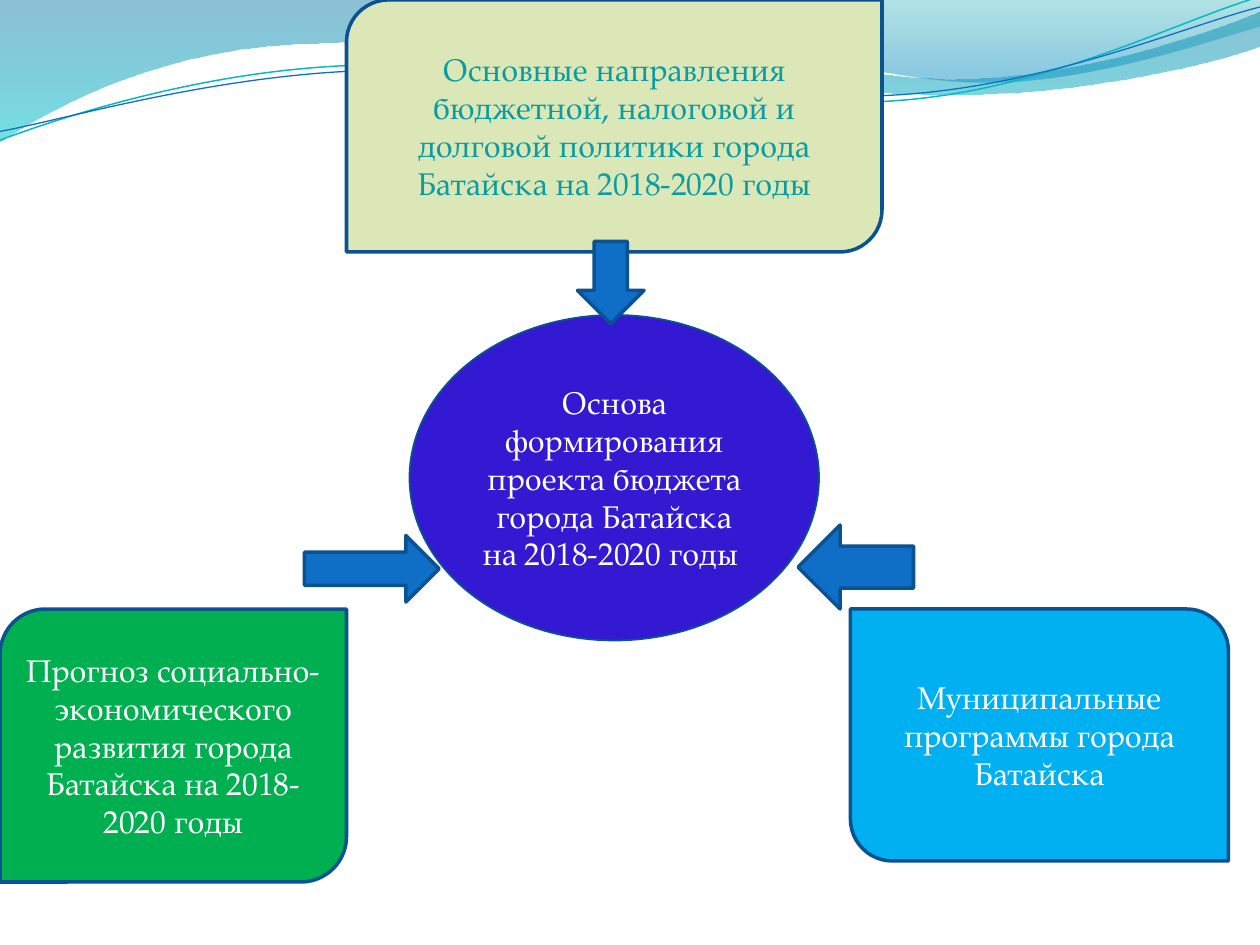
from lxml.etree import SubElement
from pptx import Presentation
from pptx.dml.color import RGBColor
from pptx.enum.shapes import MSO_SHAPE as Shape
from pptx.enum.text import MSO_ANCHOR as Anchor, PP_ALIGN as Align
from pptx.oxml.ns import qn
from pptx.util import Pt

FONT = "TeX Gyre Pagella"
COLORS = {
    "outline": "0B5292", "arrow": "0F6FC6", "center": "3319D1",
    "policy": "DBE7B6", "policy_text": "089CA3", "forecast": "00B050",
    "programs": "00B0F0", "white": "FFFFFF", "teal_line": "0AB8BF",
    "wave_blue": "0074A1", "wave_cyan": "00C6CF",
    "crest_teal": "00A1A9", "crest_blue": "008BBF",
}
WAVE_TILT = 357.3


def color(name):
    return RGBColor.from_string(COLORS[name])


def write_text(shape, text, size=18, font=FONT, text_color="white", align=Align.CENTER):
    frame = shape.text_frame
    frame.word_wrap = True
    frame.vertical_anchor = Anchor.MIDDLE
    paragraph = frame.paragraphs[0]
    paragraph.alignment = align
    run = paragraph.add_run()
    run.text = text
    run.font.size = Pt(size)
    run.font.name = font
    run.font.color.rgb = color(text_color)


def add_figure(slide, kind, box, fill, line_width=2):
    shape = slide.shapes.add_shape(kind, *map(Pt, box))
    shape.shadow.inherit = False
    shape.fill.solid()
    shape.fill.fore_color.rgb = color(fill)
    shape.line.color.rgb = color("outline")
    shape.line.width = Pt(line_width)
    return shape


def add_outline(slide, start, segments, close):
    """Segments of two numbers are corners, of six numbers Bézier curves."""
    points = [(Pt(x), Pt(y)) for segment in segments
              for x, y in zip(segment[::2], segment[1::2])]
    builder = slide.shapes.build_freeform(Pt(start[0]), Pt(start[1]))
    builder.add_line_segments(points, close=close)
    shape = builder.convert_to_shape()
    shape.shadow.inherit = False

    # Join the three points of each curve into one Bézier segment
    lines = iter(list(shape.element.spPr.iter(qn("a:lnTo"))))
    for segment in segments:
        first = next(lines)
        if len(segment) == 6:
            first.tag = qn("a:cubicBezTo")
            for line in (next(lines), next(lines)):
                first.append(line[0])
                line.getparent().remove(line)
    return shape


def add_wave(slide, start, segments, stops):
    shape = add_outline(slide, start, segments, close=True)
    shape.line.fill.background()
    shape.fill.gradient()
    shape.fill.gradient_angle = 270
    for stop, (position, name, opacity) in zip(shape.fill.gradient_stops, stops):
        stop.position = position
        stop.color.rgb = color(name)
    color_elements = shape.element.spPr.findall(".//" + qn("a:gs") + "/" + qn("a:srgbClr"))
    for element, (position, name, opacity) in zip(color_elements, stops):
        SubElement(element, qn("a:alpha")).set("val", str(opacity * 1000))


def add_wave_line(slide, start, segments, name, width):
    shape = add_outline(slide, start, segments, close=False)
    shape.fill.background()
    shape.line.color.rgb = color(name)
    shape.line.width = Pt(width)
    shape.rotation = WAVE_TILT


def add_header_waves(slide, box):
    left, top, right = box[0], box[1], box[0] + box[2]
    # Translucent bands
    add_wave(slide, (left, top), [
        (317, -1), (343, 12, 478, 45, 546, 45), (614, 45, 690, 19, right, 6.5),
        (right + 1, 26), (708, 32, 626, 55, 537, 54), (448, 54, 275, 20, 185, 24.5),
        (93, 26, 33, 60, left - 1, 81.5)],
        [(0, "wave_blue", 45), (1, "wave_cyan", 55)])
    add_wave(slide, (345, -1), [
        (366, 8, 491, 45, 554, 47), (616, 50, 692, 23, right, 15), (right, top)],
        [(0, "crest_teal", 30), (0.8, "crest_blue", 45)])
    # Thin lines, drawn level and then tilted
    add_wave_line(slide, (left - 1.4, 63.1), [
        (34.2, 51.7, 114.3, 29.4, 199.4, 29.9), (284.4, 30.4, 425.8, 67.2, 512, 64.7),
        (599.3, 62.3, 676.1, 25.9, right + 0.6, 15.4)], "teal_line", 0.85)
    add_wave_line(slide, (left - 1.1, 58.1), [
        (33.2, 53.7, 118.2, 32.6, 204.3, 33.2), (290.3, 33.7, 429.1, 63.3, 515.3, 61.4),
        (601.4, 59.4, 677.9, 29.9, right + 1.4, 21)], "arrow", 0.75)


def add_center(slide, box, text):
    write_text(add_figure(slide, Shape.OVAL, box, "center", line_width=1), text)


def add_source(slide, box, text, fill, text_color="white", mirrored=False):
    shape = add_figure(slide, Shape.ROUND_2_DIAG_RECTANGLE, box, fill)
    if mirrored:
        shape.adjustments[0], shape.adjustments[1] = 0, 0.16667
    write_text(shape, text, text_color=text_color)


def add_arrow(slide, box, kind=Shape.RIGHT_ARROW, rotation=0):
    add_figure(slide, kind, box, "arrow").rotation = rotation


def main():
    presentation = Presentation()
    presentation.slide_width, presentation.slide_height = Pt(720), Pt(540)
    slide = presentation.slides.add_slide(presentation.slide_layouts[6])

    add_header_waves(slide, (0, 0, 720, 82))

    # Center and the three sources around it
    add_center(slide, (234, 180, 234, 186),
               "Основа формирования проекта бюджета города Батайска на 2018-2020 годы ")
    add_source(slide, (486, 348, 216, 144),
               "Муниципальные программы города Батайска", "programs", mirrored=True)
    add_source(slide, (0, 348, 198, 156),
               "Прогноз социально-экономического развития города Батайска на 2018-2020 годы",
               "forecast")
    add_source(slide, (198, 0, 306, 144),
               "Основные направления бюджетной, налоговой и долговой политики "
               "города Батайска на 2018-2020 годы", "policy", text_color="policy_text")

    # Arrows toward the center
    add_arrow(slide, (330, 138, 38, 47), kind=Shape.DOWN_ARROW)
    add_arrow(slide, (456, 300, 66, 48), rotation=180)
    add_arrow(slide, (174, 306, 77, 38))

    presentation.save("out.pptx")


if __name__ == "__main__":
    main()
